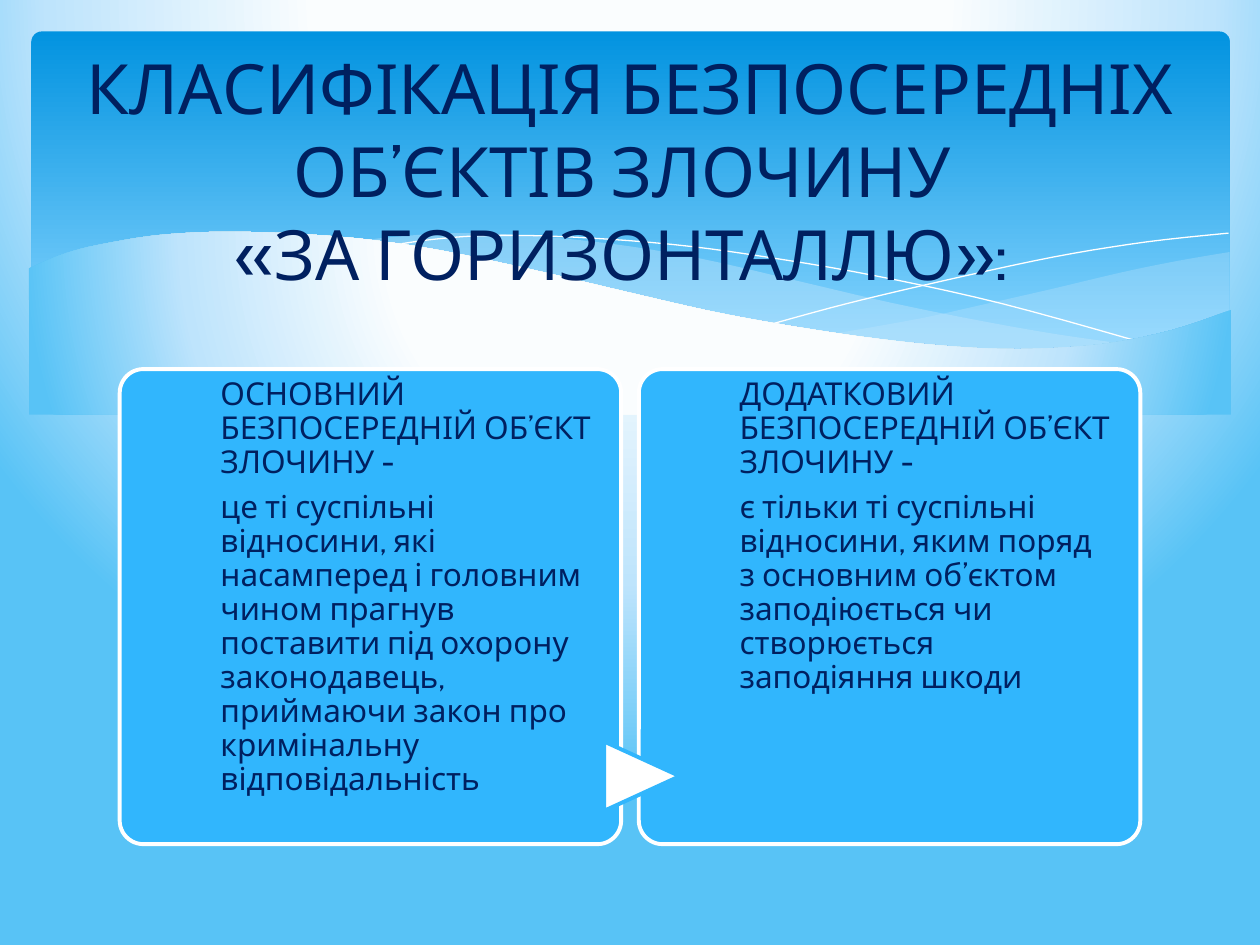
import pptx
import pptx.util
import pptx.dml.color
import pptx.enum.shapes
import pptx.enum.text
import pptx.oxml
import pptx.oxml.ns

theme = {
    "font": "Cabin",
    "title_size": 39.6,
    "card_size": 18,
    "outline": 2.25,
    "text": "002060",
    "card": "31B6FD",
    "white": "FFFFFF",
    "wave": "C6E7FC",
    "header": [(0, "0293E0"), (90, "83D3FE")],
    "glow": [(40, "FAFDFE"), (74, "BEE4FC"), (100, "58C3F6")],
}
color = pptx.dml.color.RGBColor.from_string
glow_direction = (
    '<a:path path="circle"><a:fillToRect l="20000" t="-40000" r="20000" b="140000"/></a:path>'
)
header_direction = '<a:lin ang="5400000" scaled="0"/>'

presentation = pptx.Presentation()
presentation.slide_width = pptx.util.Inches(10)
presentation.slide_height = pptx.util.Inches(7.5)
slide = presentation.slides.add_slide(presentation.slide_layouts[6])
cell = presentation.slide_width // 100


def paint_gradient(owner, fill, stops, direction):
    fill.gradient()
    gradient = owner.element.xpath(".//a:gradFill")[0]
    stop_list = "".join(
        f'<a:gs pos="{position * 1000}"><a:srgbClr val="{value}"/></a:gs>'
        for position, value in stops
    )
    namespace = pptx.oxml.ns.nsdecls("a")
    gradient.getparent().replace(gradient, pptx.oxml.parse_xml(
        f'<a:gradFill {namespace} rotWithShape="1">'
        f"<a:gsLst>{stop_list}</a:gsLst>{direction}</a:gradFill>"
    ))


def add_wave(curves, close):
    outline = []
    for curve in curves:
        knots = [curve[0], *curve, curve[-1]]
        for before, start, end, after in zip(knots, knots[1:], knots[2:], knots[3:]):
            for step in range(5):
                t = step / 5
                outline.append(tuple(
                    cell * (b + t * (c - a) / 2 + t * t * (a - 2.5 * b + 2 * c - d / 2)
                            + t ** 3 * (d - a + 3 * (b - c)) / 2)
                    for a, b, c, d in zip(before, start, end, after)
                ))
        outline.append(tuple(cell * value for value in curve[-1]))
    builder = slide.shapes.build_freeform(*outline[0], scale=1.0)
    builder.add_line_segments(outline[1:], close=close)
    shape = builder.convert_to_shape()
    shape.shadow.inherit = False
    return shape


paint_gradient(slide, slide.background.fill, theme["glow"], glow_direction)

header = slide.shapes.add_shape(
    pptx.enum.shapes.MSO_SHAPE.ROUNDED_RECTANGLE,
    2.5 * cell, 2.5 * cell, 95.1 * cell, 27 * cell)
header.adjustments[0] = 0.03
header.shadow.inherit = False
header.line.fill.background()
paint_gradient(header, header.fill, theme["header"], header_direction)

right_band = [
    [(97.6, 20), (93.5, 20.7), (89.1, 21.6), (83.2, 23), (77.9, 24.2), (72.9, 25.3), (66.1, 26.5)],
    [(66.1, 26.5), (71.9, 27.2), (76.9, 27.7), (81.4, 27.8), (86.3, 27.6), (90.5, 26.9),
     (94.2, 25.9), (97.6, 24.7)],
]
long_band = [
    [(89.3, 27.3), (83.7, 26.5), (77.5, 25.4), (70.6, 24), (62.9, 22.2), (55.5, 20.5),
     (48.9, 19.4), (42, 18.7), (36.1, 18.5), (31.3, 18.8), (28.6, 19.1)],
    [(28.6, 19.1), (36.2, 20.3), (44.9, 22.2), (53, 24), (60.1, 25.5), (66.5, 26.6),
     (73.6, 27.5), (79.6, 27.8), (84.8, 27.7), (89.3, 27.3)],
]
for curves, opacity in [(right_band, 29), (long_band, 40)]:
    band = add_wave(curves, True)
    band.fill.solid()
    band.fill.fore_color.rgb = color(theme["wave"])
    band.line.fill.background()
    alpha = pptx.oxml.parse_xml(
        f'<a:alpha {pptx.oxml.ns.nsdecls("a")} val="{opacity * 1000}"/>')
    band.element.xpath("./p:spPr/a:solidFill/a:srgbClr")[0].append(alpha)

falling_line = [(30.9, 19.5), (34.4, 19), (38.7, 18.7), (45, 18.8), (53.3, 19.4), (60.8, 20.4),
                (69.5, 21.9), (79.5, 24.1), (90.7, 27.2)]
rising_line = [(61.3, 25.7), (67.2, 24.1), (74.8, 22.3), (83.6, 20.4), (91, 19.2), (97.5, 18.5)]
for curve in (falling_line, rising_line):
    thread = add_wave([curve], False)
    thread.fill.background()
    thread.line.color.rgb = color(theme["white"])
    thread.line.width = 0

lower_wave = add_wave([
    [(97.7, 24.6), (93, 26.2), (87.5, 27.3), (80.9, 27.7), (74.4, 27.4), (66.8, 26.5),
     (57.9, 25), (50.3, 23.3), (41.8, 21.3), (34, 19.7), (27.1, 18.8), (19.3, 18.4),
     (13.2, 18.6), (8.5, 19.3), (5.2, 20.1), (2.3, 21.3)],
    [(2.3, 32.9), (97.7, 32.9)],
], True)
lower_wave.line.fill.background()
paint_gradient(lower_wave, lower_wave.fill, theme["glow"], glow_direction)

top, card_width, card_height, card_pitch = 29.3, 39.8, 37.7, 41.2
cards = [
    ("ОСНОВНИЙ БЕЗПОСЕРЕДНІЙ ОБ’ЄКТ ЗЛОЧИНУ -",
     "це ті суспільні відносини, які насамперед і головним чином прагнув поставити під охорону "
     "законодавець, приймаючи закон про кримінальну відповідальність"),
    ("ДОДАТКОВИЙ БЕЗПОСЕРЕДНІЙ ОБ’ЄКТ ЗЛОЧИНУ -",
     "є тільки ті суспільні відносини, яким поряд з основним об’єктом заподіюється чи "
     "створюється заподіяння шкоди"),
]
card_shape = pptx.enum.shapes.MSO_SHAPE.ROUNDED_RECTANGLE
arrow_shape = pptx.enum.shapes.MSO_SHAPE.FLOWCHART_EXTRACT
panels = [
    (card_shape, 9.5, top, card_width, card_height, "card", "white"),
    (card_shape, 9.5 + card_pitch, top, card_width, card_height, "card", "white"),
    (arrow_shape, 48.2, 58.6, 5.5, 6, "white", "card"),
]
for kind, left, upper, width, height, fill_name, line_name in panels:
    panel = slide.shapes.add_shape(
        kind, left * cell, upper * cell, width * cell, height * cell)
    panel.shadow.inherit = False
    panel.fill.solid()
    panel.fill.fore_color.rgb = color(theme[fill_name])
    panel.line.color.rgb = color(theme[line_name])
    panel.line.width = pptx.util.Pt(theme["outline"])
    if kind == card_shape:
        panel.adjustments[0] = 0.05
    else:
        panel.rotation = 90

for index, texts in enumerate(cards):
    card_text = slide.shapes.add_textbox(
        (17.5 + index * card_pitch) * cell, top * cell, 29.7 * cell, card_height * cell)
    frame = card_text.text_frame
    frame.word_wrap = True
    frame.margin_left = frame.margin_right = frame.margin_bottom = 0
    frame.margin_top = pptx.util.Inches(0.07)
    frame.add_paragraph()
    for paragraph, text in zip(frame.paragraphs, texts):
        paragraph.text = text
        paragraph.line_spacing = 0.9
        paragraph.space_after = pptx.util.Pt(0.35 * theme["card_size"])
        paragraph.font.size = pptx.util.Pt(theme["card_size"])
        paragraph.font.name = theme["font"]
        paragraph.font.color.rgb = color(theme["text"])

title = slide.shapes.add_textbox(5 * cell, 3.7 * cell, 90 * cell, 19.6 * cell)
title.text_frame.word_wrap = True
title.text_frame.vertical_anchor = pptx.enum.text.MSO_ANCHOR.MIDDLE
paragraph = title.text_frame.paragraphs[0]
paragraph.text = "КЛАСИФІКАЦІЯ БЕЗПОСЕРЕДНІХ ОБ’ЄКТІВ ЗЛОЧИНУ \v«ЗА ГОРИЗОНТАЛЛЮ»: "
paragraph.alignment = pptx.enum.text.PP_ALIGN.CENTER
paragraph.font.size = pptx.util.Pt(theme["title_size"])
paragraph.font.name = theme["font"]
paragraph.font.color.rgb = color(theme["text"])

presentation.save("out.pptx")
